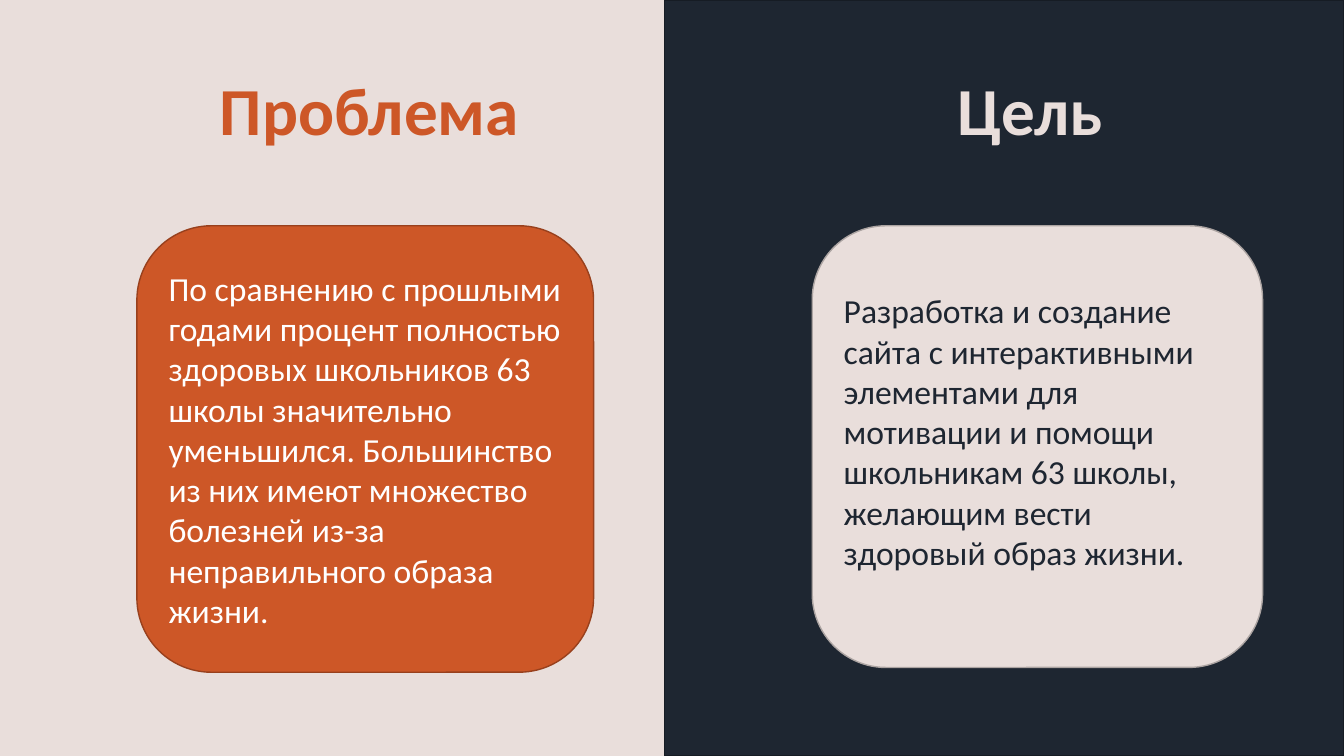
from dataclasses import dataclass

from pptx import Presentation
from pptx.dml.color import RGBColor
from pptx.enum.shapes import MSO_SHAPE
from pptx.enum.text import MSO_ANCHOR, PP_ALIGN
from pptx.util import Cm, Pt

RECTANGLE = MSO_SHAPE.RECTANGLE
ROUNDED = MSO_SHAPE.ROUNDED_RECTANGLE
MIDDLE = MSO_ANCHOR.MIDDLE
LEFT, CENTER = PP_ALIGN.LEFT, PP_ALIGN.CENTER


@dataclass(frozen=True)
class Theme:
    font: str = "Calibri"
    title_size: int = 48
    body_size: int = 24
    line_width: int = 1
    light: str = "E9DEDB"
    light_line: str = "ACA4A2"
    dark: str = "1E2631"
    dark_line: str = "161C24"
    accent: str = "CD5727"
    accent_line: str = "98401D"
    white: str = "FFFFFF"


THEME = Theme()

# Lengths are in centimetres
SLIDE_WIDTH, SLIDE_HEIGHT = 33.87, 19.05
DARK_HALF_LEFT = 16.74
TITLE_TOP, TITLE_WIDTH, TITLE_HEIGHT = 1.02, 13.94, 3.68
CARD_TOP = 5.69

COLUMNS = [
    {
        "title": "Проблема",
        "title_left": 2.34,
        "title_color": THEME.accent,
        "body": "По сравнению с прошлыми годами процент полностью здоровых "
                "школьников 63 школы значительно уменьшился. Большинство из них "
                "имеют множество болезней из-за неправильного образа жизни.",
        "card_left": 3.45,
        "card_size": (11.51, 11.25),
        "card_colors": (THEME.accent, THEME.accent_line),
        "body_color": THEME.white,
        "bottom_margin": 0.13,
    },
    {
        "title": "Цель",
        "title_left": 19.0,
        "title_color": THEME.light,
        "body": "Разработка и создание сайта с интерактивными элементами для "
                "мотивации и помощи школьникам 63 школы, желающим вести "
                "здоровый образ жизни.",
        "card_left": 20.47,
        "card_size": (11.35, 11.13),
        "card_colors": (THEME.light, THEME.light_line),
        "body_color": THEME.dark,
        "bottom_margin": 0.9,
    },
]


def add_box(slide, kind, left, top, width, height, fill, line):
    shape = slide.shapes.add_shape(kind, Cm(left), Cm(top), Cm(width), Cm(height))
    shape.shadow.inherit = False
    shape.fill.solid()
    shape.fill.fore_color.rgb = RGBColor.from_string(fill)
    shape.line.color.rgb = RGBColor.from_string(line)
    shape.line.width = Pt(THEME.line_width)
    return shape


def write_text(shape, text, size, color, alignment, bold=False):
    """Fill the shape with one wrapped, vertically centred paragraph."""
    frame = shape.text_frame
    frame.word_wrap = True
    frame.vertical_anchor = MIDDLE
    paragraph = frame.paragraphs[0]
    paragraph.alignment = alignment
    run = paragraph.add_run()
    run.text = text
    run.font.name = THEME.font
    run.font.size = Pt(size)
    run.font.bold = bold
    run.font.color.rgb = RGBColor.from_string(color)
    return paragraph


def add_column(slide, column):
    title = slide.shapes.add_textbox(
        Cm(column["title_left"]), Cm(TITLE_TOP), Cm(TITLE_WIDTH), Cm(TITLE_HEIGHT))
    paragraph = write_text(title, column["title"], THEME.title_size,
                           column["title_color"], CENTER, bold=True)
    paragraph.line_spacing = 0.9

    card = add_box(slide, ROUNDED, column["card_left"], CARD_TOP,
                   *column["card_size"], *column["card_colors"])
    card.text_frame.margin_bottom = Cm(column["bottom_margin"])
    write_text(card, column["body"], THEME.body_size, column["body_color"], LEFT)


def main():
    presentation = Presentation()
    presentation.slide_width = Cm(SLIDE_WIDTH)
    presentation.slide_height = Cm(SLIDE_HEIGHT)
    slide = presentation.slides.add_slide(presentation.slide_layouts[6])
    slide.background.fill.solid()
    slide.background.fill.fore_color.rgb = RGBColor.from_string(THEME.light)

    add_box(slide, RECTANGLE, DARK_HALF_LEFT, 0, SLIDE_WIDTH - DARK_HALF_LEFT,
            SLIDE_HEIGHT, THEME.dark, THEME.dark_line)
    for column in COLUMNS:
        add_column(slide, column)
    presentation.save("out.pptx")


if __name__ == "__main__":
    main()
